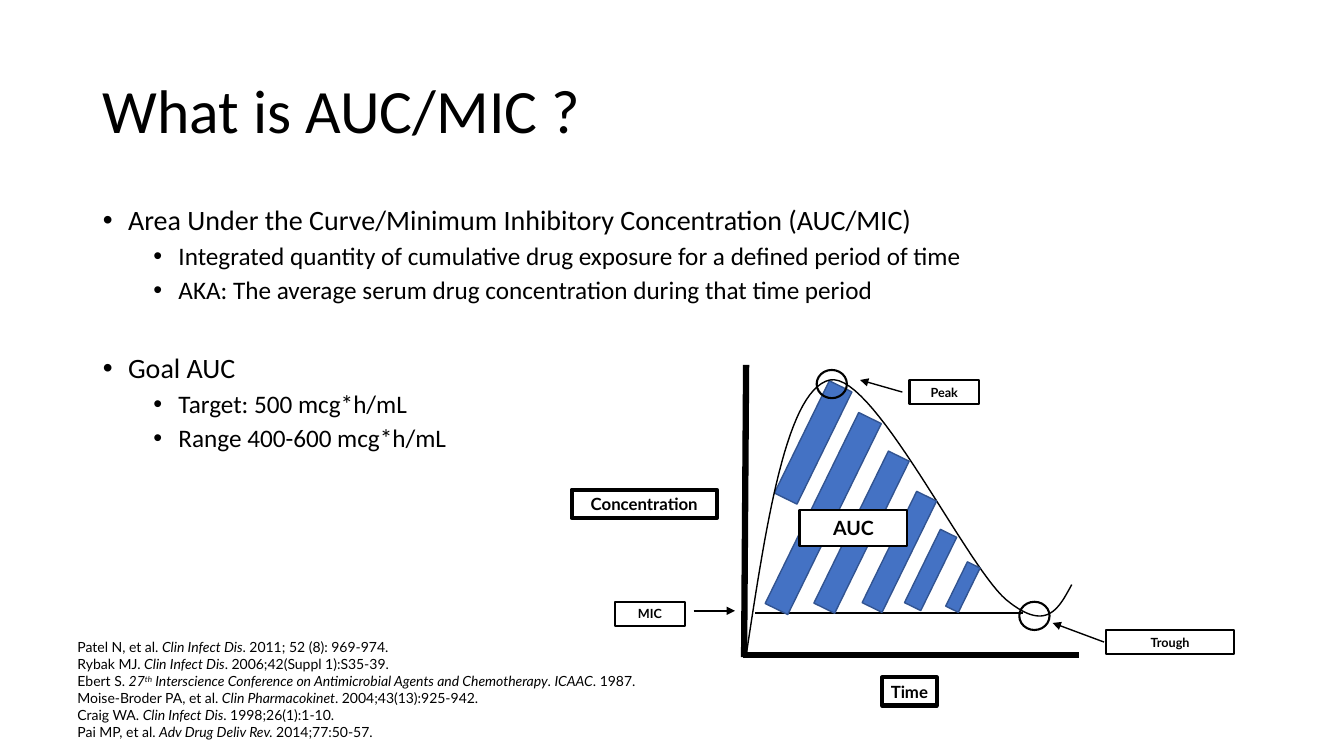
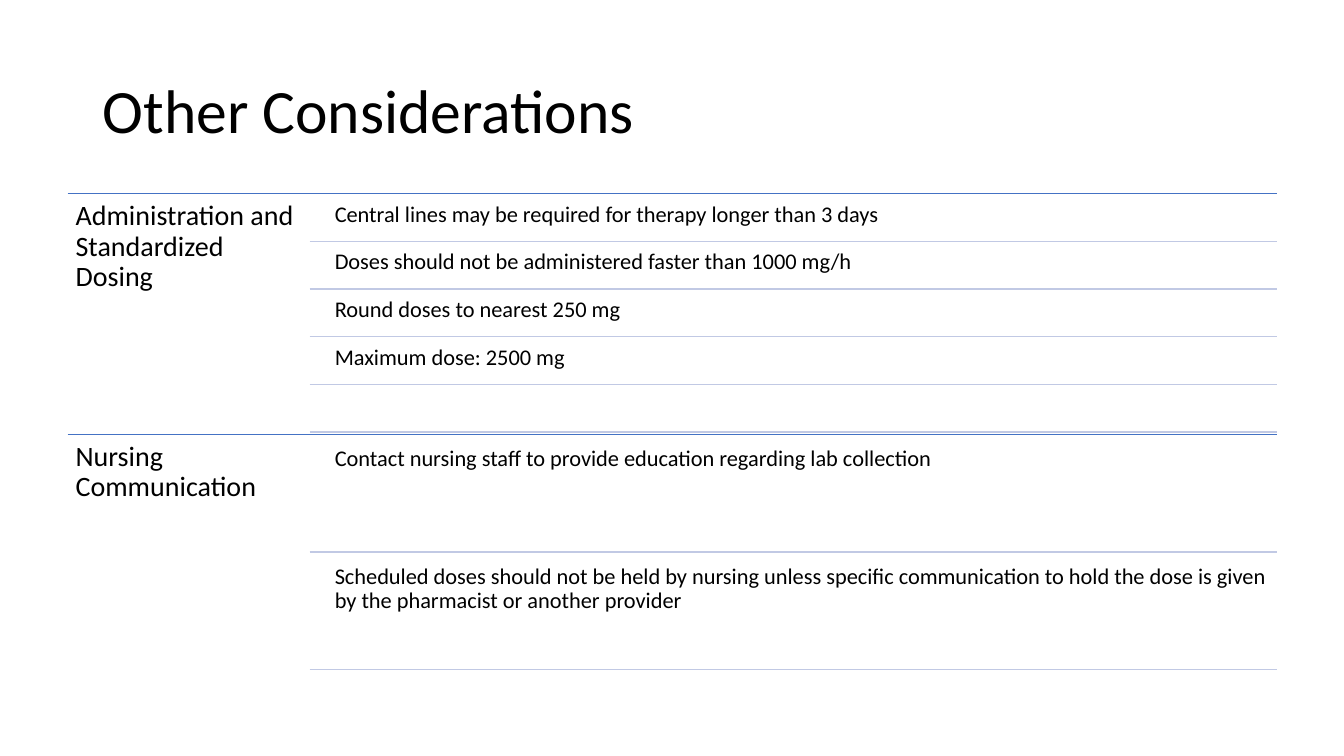
from lxml.etree import SubElement
from pptx import Presentation
from pptx.dml.color import RGBColor
from pptx.enum.shapes import MSO_CONNECTOR, MSO_SHAPE
from pptx.enum.text import MSO_ANCHOR, MSO_AUTO_SIZE, PP_ALIGN
from pptx.oxml.ns import qn
from pptx.util import Inches, Pt

BLACK = RGBColor(0x00, 0x00, 0x00)
WHITE = RGBColor(0xFF, 0xFF, 0xFF)
BLUE = RGBColor(0x44, 0x72, 0xC4)
DARK_BLUE = RGBColor(0x32, 0x54, 0x91)
PALE_BLUE = RGBColor(0xC1, 0xC9, 0xE4)
HEADING_FONT = "Calibri"
LABEL_FONT = "Lato"
TITLE_AND_BODY, TITLE_ONLY = 1, 5

BULLETS = [
    (0, "Area Under the Curve/Minimum Inhibitory Concentration (AUC/MIC)", 10),
    (1, "Integrated quantity of cumulative drug exposure for a defined period of time", 5),
    (1, "AKA: The average serum drug concentration during that time period", 5),
    (0, "Goal AUC", 35),
    (1, "Target: 500 mcg*h/mL", 5),
    (1, "Range 400-600 mcg*h/mL", 5),
]
PLAIN = {}
ITALIC = {"italic": True}
RAISED = {"italic": True, "baseline": 30000}
REFERENCES = [
    [("Patel N, et al. ", PLAIN), ("Clin Infect Dis", ITALIC), (". 2011; 52 (8): 969-974.", PLAIN)],
    [("Rybak MJ. ", PLAIN), ("Clin Infect Dis", ITALIC), (". 2006;42(Suppl 1):S35-39.", PLAIN)],
    [("Ebert S. ", PLAIN), ("27", ITALIC), ("th", RAISED),
     (" Interscience Conference on Antimicrobial Agents and Chemotherapy", ITALIC),
     (". ", PLAIN), ("ICAAC", ITALIC), (". 1987.", PLAIN)],
    [("Moise-Broder PA, et al. ", PLAIN), ("Clin Pharmacokinet", ITALIC), (". 2004;43(13):925-942.", PLAIN)],
    [("Craig WA. ", PLAIN), ("Clin Infect Dis", ITALIC), (". 1998;26(1):1-10.", PLAIN)],
    [("Pai MP, et al. ", PLAIN), ("Adv Drug Deliv Rev. ", ITALIC), ("2014;77:50-57.", PLAIN)],
]
FIRST_BAR = (7.94, 3.77, 0.25, 1.24)
OTHER_BARS = [
    (8.43, 4.44, 0.23, 1.68),
    (8.81, 4.86, 0.22, 1.23),
    (9.14, 5.25, 0.18, 0.81),
    (9.48, 5.58, 0.14, 0.49),
    (8.04, 4.04, 0.25, 2.11),
]
CURVE = [
    [(7.4, 6.51), (7.6, 5.19), (7.8, 3.87), (8.23, 3.77)],
    [(8.23, 3.77), (8.66, 3.68), (9.58, 5.61), (9.98, 5.95)],
    [(9.98, 5.95), (10.38, 6.28), (10.5, 6.04), (10.63, 5.8)],
]
LABELS = [
    ("Trough", (10.97, 6.25, 1.27, 0.24), 9, 1.5),
    ("Peak", (9.02, 3.77, 0.69, 0.24), 9, 1.5),
    ("MIC", (6.1, 5.97, 0.69, 0.24), 9, 1.5),
    ("Time", (8.75, 6.72, 0.54, 0.28), 12, 3),
    ("Concentration", (5.67, 4.86, 1.44, 0.28), 12, 3),
    ("AUC", (7.93, 5.06, 1.07, 0.36), 14, 1.5),
]
ARROWS = [
    ((10.95, 6.37), (10.44, 6.18)),
    ((8.95, 3.89), (8.53, 3.77)),
    ((6.88, 6.06), (7.29, 6.06)),
]
SECTIONS = [
    ("Administration and Standardized Dosing", [
        "Central lines may be required for therapy longer than 3 days",
        "Doses should not be administered faster than 1000 mg/h",
        "Round doses to nearest 250 mg",
        "Maximum dose: 2500 mg",
        "",
    ]),
    ("Nursing Communication", [
        "Contact nursing staff to provide education regarding lab collection",
        "Scheduled doses should not be held by nursing unless specific communication "
        "to hold the dose is given by the pharmacist or another provider",
    ]),
]
SECTION_LEFT, SECTION_RIGHT, SECTION_TOP, SECTION_HEIGHT = 0.67, 12.67, 1.92, 2.39
ROW_LEFT, ROW_TEXT_LEFT, ROW_GAP_SHARE = 3.07, 3.25, 0.05


def inches(*lengths):
    """Convert numbers to lengths in inches."""
    return [Inches(length) for length in lengths]


def add_text(paragraph, text, size, font=HEADING_FONT, bold=False, italic=False, baseline=0):
    """Append a formatted black run to a paragraph."""
    run = paragraph.add_run()
    run.text = text
    run.font.name = font
    run.font.size = Pt(size)
    run.font.bold = bold
    run.font.italic = italic
    run.font.color.rgb = BLACK
    if baseline:
        run.font._element.set("baseline", str(baseline))


def place(shape, left, top, width, height):
    """Move and size a shape."""
    shape.left, shape.top, shape.width, shape.height = inches(left, top, width, height)


def set_frame(frame, anchor=MSO_ANCHOR.TOP, horizontal=0.1, vertical=0.05, wrap=True):
    """Set wrapping, anchor and margins of a text frame."""
    frame.auto_size = MSO_AUTO_SIZE.NONE
    frame.word_wrap = wrap
    frame.vertical_anchor = anchor
    frame.margin_left = frame.margin_right = Inches(horizontal)
    frame.margin_top = frame.margin_bottom = Inches(vertical)


def next_paragraph(frame, index):
    """Return the first paragraph for index zero, else a new one."""
    return frame.add_paragraph() if index else frame.paragraphs[0]


def add_titled_slide(presentation, layout, title):
    """Add a slide with the shared title style."""
    slide = presentation.slides.add_slide(presentation.slide_layouts[layout])
    shape = slide.shapes.title
    place(shape, 0.92, 0.4, 11.5, 1.45)
    set_frame(shape.text_frame, MSO_ANCHOR.MIDDLE)
    paragraph = shape.text_frame.paragraphs[0]
    paragraph.alignment = PP_ALIGN.LEFT
    paragraph.line_spacing = 0.9
    add_text(paragraph, title, 44)
    return slide


def fill_body(shape):
    """Write the bulleted list into the body placeholder."""
    place(shape, 0.92, 2, 11.5, 4.76)
    set_frame(shape.text_frame)
    for index, (level, text, space_before) in enumerate(BULLETS):
        paragraph = next_paragraph(shape.text_frame, index)
        paragraph.level = level
        paragraph.line_spacing = 0.9
        paragraph.space_before = Pt(space_before)
        properties = paragraph._p.get_or_add_pPr()
        properties.set("marL", str(Inches(0.25 + 0.5 * level)))
        properties.set("indent", str(Inches(-0.25)))
        SubElement(properties, qn("a:buFont"), typeface="Arial")
        SubElement(properties, qn("a:buChar"), char="•")
        add_text(paragraph, text, 20 - 2 * level)


def add_references(slide):
    """Add the list of cited papers."""
    frame = slide.shapes.add_textbox(*inches(0.67, 6.29, 6.21, 1.04)).text_frame
    set_frame(frame)
    for index, parts in enumerate(REFERENCES):
        paragraph = next_paragraph(frame, index)
        for text, style in parts:
            add_text(paragraph, text, 10, font=LABEL_FONT, **style)


def add_line(slide, start, end, color=BLACK, width=1, arrow=False):
    """Draw a straight line, with an optional arrowhead at its end."""
    line = slide.shapes.add_connector(MSO_CONNECTOR.STRAIGHT, *inches(*start, *end))
    line.line.color.rgb = color
    line.line.width = Pt(width)
    if arrow:
        SubElement(line.line._get_or_add_ln(), qn("a:tailEnd"), type="triangle")
    SubElement(line._element.spPr, qn("a:effectLst"))


def style_shape(shape, fill, color, width):
    """Set the fill and outline of a shape and drop its shadow."""
    shape.shadow.inherit = False
    if fill is None:
        shape.fill.background()
    else:
        shape.fill.solid()
        shape.fill.fore_color.rgb = fill
    shape.line.color.rgb = color
    shape.line.width = Pt(width)


def add_shape(slide, kind, box, fill=None, color=BLACK, width=1.5):
    """Add a preset shape with its fill and outline."""
    shape = slide.shapes.add_shape(kind, *inches(*box))
    style_shape(shape, fill, color, width)
    return shape


def add_bar(slide, box):
    """Add one slanted bar of the shaded area."""
    bar = add_shape(slide, MSO_SHAPE.RECTANGLE, box, BLUE, DARK_BLUE, 1)
    bar.rotation = 26.1


def add_label(slide, text, box, size, width):
    """Add a framed bold label."""
    label = add_shape(slide, MSO_SHAPE.RECTANGLE, box, WHITE, width=width)
    set_frame(label.text_frame, MSO_ANCHOR.MIDDLE, 0.07, 0.04, wrap=False)
    paragraph = label.text_frame.paragraphs[0]
    paragraph.alignment = PP_ALIGN.CENTER
    add_text(paragraph, text, size, font=LABEL_FONT, bold=True)


def curve_points(segments, steps=30):
    """Return points along joined cubic curves."""
    points = [segments[0][0]]
    for segment in segments:
        for step in range(1, steps + 1):
            t = step / steps
            weights = ((1 - t) ** 3, 3 * t * (1 - t) ** 2, 3 * t ** 2 * (1 - t), t ** 3)
            points.append(tuple(sum(w * c for w, c in zip(weights, axis)) for axis in zip(*segment)))
    return points


def add_curve(slide):
    """Draw the concentration curve."""
    start, *rest = [inches(*point) for point in curve_points(CURVE)]
    builder = slide.shapes.build_freeform(*start)
    builder.add_line_segments(rest, close=False)
    style_shape(builder.convert_to_shape(), None, BLACK, 1)


def add_diagram(slide):
    """Draw concentration over time with the area under the curve."""
    add_bar(slide, FIRST_BAR)
    add_line(slide, (7.4, 3.62), (7.38, 6.52), width=4.5)
    add_line(slide, (10.7, 6.5), (7.37, 6.5), width=4.5)
    add_curve(slide)
    for left, top in ((10.11, 5.97), (8.1, 3.67)):
        add_shape(slide, MSO_SHAPE.OVAL, (left, top, 0.3, 0.28))
    add_line(slide, (7.49, 6.08), (10.15, 6.08))
    for box in OTHER_BARS:
        add_bar(slide, box)
    for label in LABELS:
        add_label(slide, *label)
    for start, end in ARROWS:
        add_line(slide, start, end, arrow=True)


def add_section_text(slide, text, box, size, margin):
    """Add a heading or row text of a section."""
    frame = slide.shapes.add_textbox(*inches(*box)).text_frame
    set_frame(frame, horizontal=margin, vertical=margin)
    frame.paragraphs[0].line_spacing = 0.9
    add_text(frame.paragraphs[0], text, size)


def add_section(slide, top, heading, rows):
    """Add a ruled section whose rows share its height equally."""
    add_line(slide, (SECTION_LEFT, top), (SECTION_RIGHT, top), BLUE)
    add_section_text(slide, heading, (SECTION_LEFT, top, 2.4, SECTION_HEIGHT), 20, 0.08)
    row_height = SECTION_HEIGHT / (len(rows) * (1 + ROW_GAP_SHARE) + ROW_GAP_SHARE)
    gap = row_height * ROW_GAP_SHARE
    for index, text in enumerate(rows):
        row_top = top + gap + index * (row_height + gap)
        bottom = row_top + row_height
        if text:
            width = SECTION_RIGHT - ROW_TEXT_LEFT
            add_section_text(slide, text, (ROW_TEXT_LEFT, row_top, width, row_height), 16, 0.07)
        add_line(slide, (ROW_LEFT, bottom), (SECTION_RIGHT, bottom), PALE_BLUE)


def main():
    """Build and save the presentation."""
    presentation = Presentation()
    presentation.slide_width, presentation.slide_height = inches(13.33, 7.5)

    slide = add_titled_slide(presentation, TITLE_AND_BODY, "What is AUC/MIC ?")
    fill_body(slide.placeholders[1])
    add_references(slide)
    add_diagram(slide)

    slide = add_titled_slide(presentation, TITLE_ONLY, "Other Considerations")
    for index, (heading, rows) in enumerate(SECTIONS):
        add_section(slide, SECTION_TOP + index * SECTION_HEIGHT, heading, rows)

    presentation.save("out.pptx")


if __name__ == "__main__":
    main()
